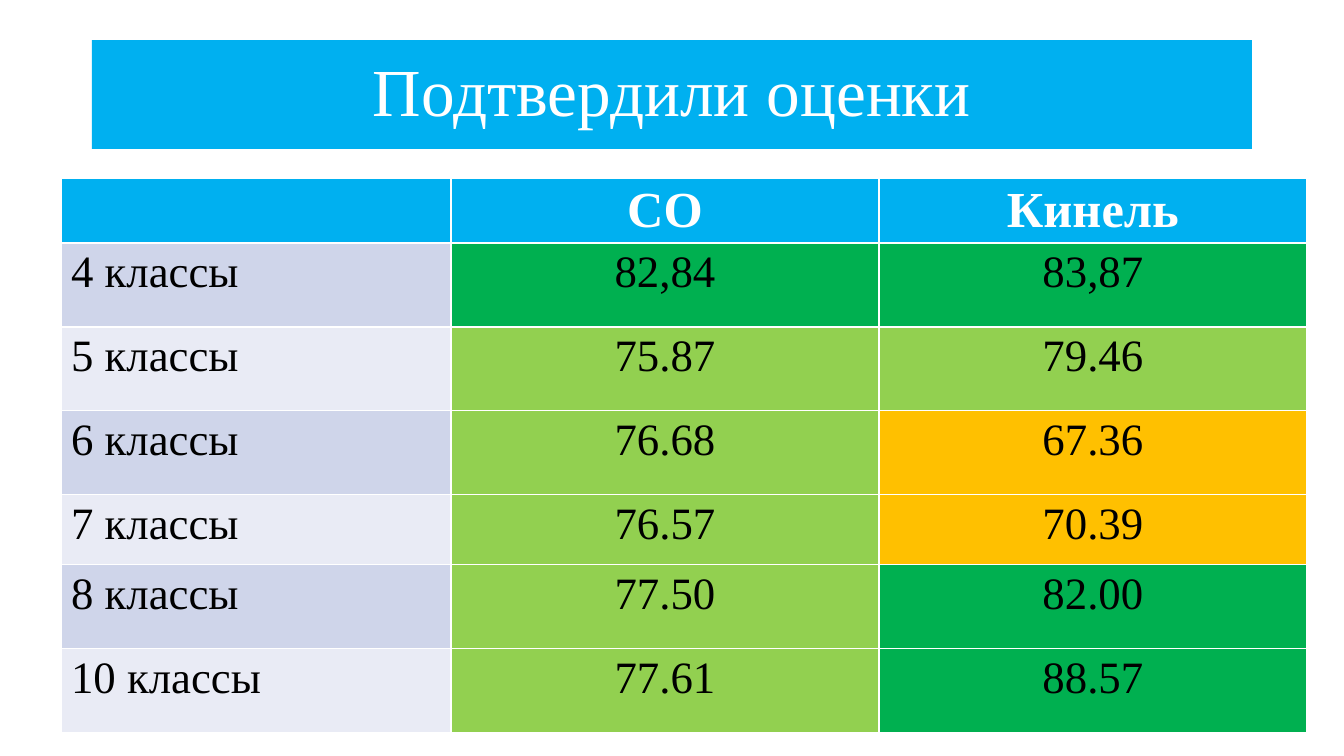
from pptx import Presentation
from pptx.dml.color import RGBColor
from pptx.enum.text import MSO_ANCHOR, PP_ALIGN
from pptx.util import Emu, Pt

PX = 914400 / 100.8
FONT = "Times New Roman"
WHITE = RGBColor(0xFF, 0xFF, 0xFF)
BLACK = RGBColor(0x00, 0x00, 0x00)
BLUE = RGBColor(0x00, 0xB0, 0xF0)
GREEN = RGBColor(0x00, 0xB0, 0x50)
LIME = RGBColor(0x92, 0xD0, 0x50)
AMBER = RGBColor(0xFF, 0xC0, 0x00)
BANDS = [RGBColor(0xCF, 0xD5, 0xEA), RGBColor(0xE9, 0xEB, 0xF5)]


def px(value):
    return Emu(round(value * PX))


def add_text(paragraph, text, size, color, bold=False, align=PP_ALIGN.CENTER):
    paragraph.alignment = align
    run = paragraph.add_run()
    run.text = text
    run.font.name = FONT
    run.font.size = Pt(size)
    run.font.bold = bold
    run.font.color.rgb = color


presentation = Presentation()
presentation.slide_width = px(1344)
presentation.slide_height = px(756)
slide = presentation.slides.add_slide(presentation.slide_layouts[5])

title = slide.shapes.title
title.left, title.top, title.width, title.height = px(92), px(40), px(1160), px(109)
title.fill.solid()
title.fill.fore_color.rgb = BLUE
title.text_frame.vertical_anchor = MSO_ANCHOR.MIDDLE
title_paragraph = title.text_frame.paragraphs[0]
title_paragraph.line_spacing = 0.9
add_text(title_paragraph, "Подтвердили оценки", 48, WHITE)

headings = ["", "СО", "Кинель"]
grades = [
    ("4 классы", "82,84", GREEN, "83,87", GREEN),
    ("5 классы", "75.87", LIME, "79.46", LIME),
    ("6 классы", "76.68", LIME, "67.36", AMBER),
    ("7 классы", "76.57", LIME, "70.39", AMBER),
    ("8 классы", "77.50", LIME, "82.00", GREEN),
    ("10 классы", "77.61", LIME, "88.57", GREEN),
]
column_widths = [390, 428, 428]
row_heights = [65, 84, 84, 84, 70, 84, 84]

table = slide.shapes.add_table(
    len(row_heights), len(column_widths),
    px(61), px(178), px(sum(column_widths)), px(sum(row_heights)),
).table
for column, width in zip(table.columns, column_widths):
    column.width = px(width)
for row, height in zip(table.rows, row_heights):
    row.height = px(height)

for cell, heading in zip(table.rows[0].cells, headings):
    cell.fill.solid()
    cell.fill.fore_color.rgb = BLUE
    cell.margin_bottom = px(2)
    if heading:
        add_text(cell.text_frame.paragraphs[0], heading, 36, WHITE, bold=True)

for index, (grade, region, region_color, town, town_color) in enumerate(grades):
    entries = [
        (grade, BANDS[index % 2], PP_ALIGN.LEFT),
        (region, region_color, PP_ALIGN.CENTER),
        (town, town_color, PP_ALIGN.CENTER),
    ]
    for cell, (text, color, align) in zip(table.rows[index + 1].cells, entries):
        cell.fill.solid()
        cell.fill.fore_color.rgb = color
        add_text(cell.text_frame.paragraphs[0], text, 32, BLACK, align=align)

presentation.save("out.pptx")
